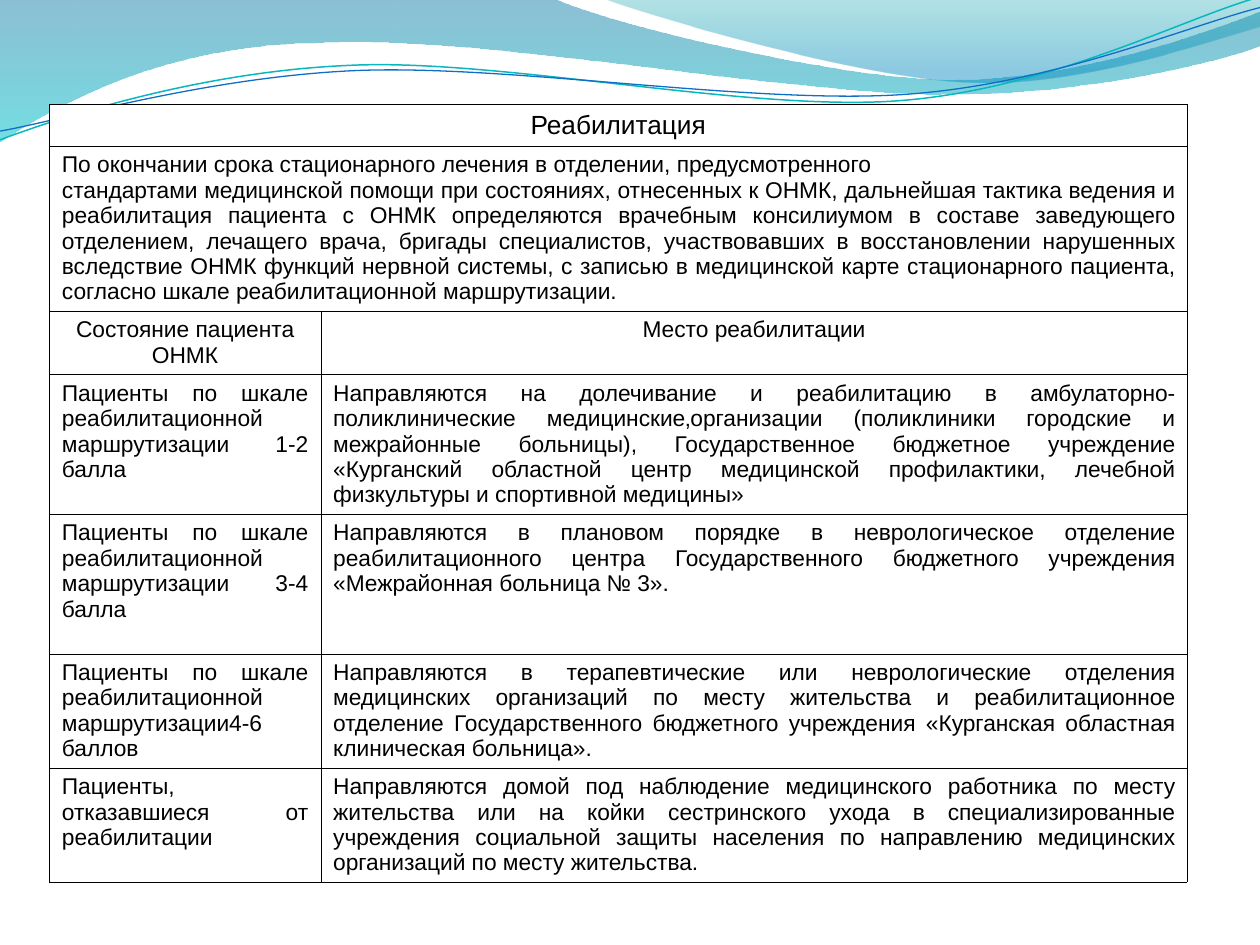
from lxml.etree import SubElement
from pptx import Presentation
from pptx.dml.color import RGBColor
from pptx.enum.text import PP_ALIGN as Align
from pptx.oxml.ns import qn
from pptx.util import Pt

BLACK = RGBColor(0x00, 0x00, 0x00)
WHITE = RGBColor(0xFF, 0xFF, 0xFF)
DEEP_BLUE = RGBColor(0x00, 0x74, 0xA0)
CYAN = RGBColor(0x00, 0xC4, 0xCD)
SKY_BLUE = RGBColor(0x00, 0x8A, 0xBF)
TEAL = RGBColor(0x00, 0xA0, 0xA8)
TURQUOISE = RGBColor(0x09, 0xB7, 0xBF)
BLUE = RGBColor(0x0F, 0x6F, 0xC6)

deck = Presentation()
deck.slide_width, deck.slide_height = Pt(720), Pt(540)
page = deck.slides.add_slide(deck.slide_layouts[6])


def add_outline(start, segments, close):
    """Pairs are straight segments, sixes are cubic curves (points)."""
    points = [(Pt(segment[i]), Pt(segment[i + 1]))
              for segment in segments for i in range(0, len(segment), 2)]
    builder = page.shapes.build_freeform(Pt(start[0]), Pt(start[1]))
    builder.add_line_segments(points, close=close)
    shape = builder.convert_to_shape()
    shape.shadow.inherit = False
    # Join the three points of each curve into one cubic segment
    steps = iter(list(shape._element.iter(qn("a:lnTo"))))
    for segment in segments:
        group = [next(steps) for _ in range(len(segment) // 2)]
        if len(group) == 3:
            curve = group[0].makeelement(qn("a:cubicBezTo"))
            group[0].addprevious(curve)
            for step in group:
                curve.append(step[0])
                step.getparent().remove(step)
    return shape


def write_text(cell, text, size=13, align=Align.JUSTIFY, color=BLACK):
    cell.text_frame.text = text
    for para in cell.text_frame.paragraphs:
        para.alignment = align
        para.font.name = "Arial"
        para.font.size = Pt(size)
        para.font.color.rgb = color


# Translucent waves: start, segments, gradient angle, stops (position, colour, opacity)
waves = [
    ((0, 0),
     [(316.8, -0.7), (342.7, 12.2, 478.1, 45.4, 545.8, 45.4),
      (614.2, 45.4, 689.8, 18.7, 720, 6.5), (720.7, 25.9),
      (707.8, 31.7, 626.4, 54.7, 537.1, 54), (447.8, 54, 275, 20.2, 185, 24.5),
      (92.9, 25.2, 33.1, 59.8, -0.7, 81.4)],
     270, [(0, DEEP_BLUE, 45), (1, CYAN, 55)]),
    ((344.9, -0.7),
     [(366.5, 7.9, 491, 44.6, 553.7, 46.8), (616.3, 49.7, 691.9, 23, 720, 15.1), (720, 0)],
     90, [(0.2, SKY_BLUE, 45), (1, TEAL, 30)]),
]
for start, segments, angle, stops in waves:
    wave = add_outline(start, segments, close=True)
    wave.line.fill.background()
    wave.fill.gradient()
    wave.fill.gradient_angle = angle
    for stop, (position, color, _) in zip(wave.fill.gradient_stops, stops):
        stop.position = position
        stop.color.rgb = color
    colors = wave._element.spPr.iter(qn("a:srgbClr"))
    for color_element, (_, _, opacity) in zip(colors, stops):
        SubElement(color_element, qn("a:alpha")).set("val", str(opacity * 1000))

# Thin wave lines
wave_lines = [
    ((0, 79.9), [(34.6, 67, 113.8, 41, 199.4, 37.4), (284.4, 33.1, 427, 64.1, 513.4, 57.6),
                 (599.8, 51.1, 675.4, 10.8, 718.6, -1.4)], TURQUOISE, 0.85),
    ((0, 74.9), [(33.8, 69.1, 118.1, 43.9, 203.8, 40.3), (290.2, 36.7, 429.8, 59.8, 516.2, 54),
                 (601.9, 48.2, 677.5, 15.1, 720, 4.3)], BLUE, 0.75),
]
for start, segments, color, width in wave_lines:
    wave_line = add_outline(start, segments, close=False)
    wave_line.fill.background()
    wave_line.line.color.rgb = color
    wave_line.line.width = Pt(width)

# Rehabilitation table
rows = [
    ["Реабилитация"],
    ["По окончании срока стационарного лечения в отделении, предусмотренного\n"
     "стандартами медицинской помощи при состояниях, отнесенных к ОНМК, дальнейшая тактика "
     "ведения и реабилитация пациента с ОНМК определяются врачебным консилиумом в составе "
     "заведующего отделением, лечащего врача, бригады специалистов, участвовавших в "
     "восстановлении нарушенных вследствие ОНМК функций нервной системы, с записью в "
     "медицинской карте стационарного пациента, согласно шкале реабилитационной маршрутизации."],
    ["Состояние пациента ОНМК", "Место реабилитации"],
    ["Пациенты по шкале реабилитационной маршрутизации 1-2 балла",
     "Направляются на долечивание и реабилитацию в амбулаторно-поликлинические "
     "медицинские‚организации (поликлиники городские и межрайонные больницы), "
     "Государственное бюджетное учреждение «Курганский областной центр медицинской "
     "профилактики, лечебной физкультуры и спортивной медицины»"],
    ["Пациенты по шкале реабилитационной маршрутизации 3-4 балла",
     "Направляются в плановом порядке в неврологическое отделение реабилитационного центра "
     "Государственного бюджетного учреждения «Межрайонная больница № 3»."],
    ["Пациенты по шкале реабилитационной маршрутизации4-6 баллов",
     "Направляются в терапевтические или неврологические отделения медицинских организаций "
     "по месту жительства и реабилитационное отделение Государственного бюджетного "
     "учреждения «Курганская областная клиническая больница»."],
    ["Пациенты, отказавшиеся от реабилитации",
     "Направляются домой под наблюдение медицинского работника по месту жительства или на "
     "койки сестринского ухода в специализированные учреждения социальной защиты населения "
     "по направлению медицинских организаций по месту жительства."],
]
column_widths = [155, 495.2]
row_heights = [17.3, 87.1, 25.9, 72, 72, 56.9, 56.9]
frame = page.shapes.add_table(len(rows), 2, Pt(28.2), Pt(59.5),
                              Pt(sum(column_widths)), Pt(sum(row_heights)))
table = frame.table
table.first_row = table.horz_banding = False
for column, width in zip(table.columns, column_widths):
    column.width = Pt(width)
for row, height in zip(table.rows, row_heights):
    row.height = Pt(height)
frame.height = Pt(408.2)

# Cell borders and fill
for cell in table.iter_cells():
    properties = cell._tc.get_or_add_tcPr()
    for side in ("lnL", "lnR", "lnT", "lnB"):
        border = SubElement(properties, qn(f"a:{side}"), w=str(Pt(0.06)))
        SubElement(SubElement(border, qn("a:solidFill")), qn("a:srgbClr")).set("val", str(BLACK))
    cell.fill.solid()
    cell.fill.fore_color.rgb = WHITE

# Cell text
for index, texts in enumerate(rows):
    if len(texts) == 1:
        table.cell(index, 0).merge(table.cell(index, 1))
    for column, text in enumerate(texts):
        write_text(table.cell(index, column), text, size=15 if index == 0 else 13,
                   align=Align.CENTER if index in (0, 2) else Align.JUSTIFY)

# One line of room below the 3-4 point patients
table.cell(4, 0).margin_bottom = Pt(18.1)

deck.save("out.pptx")
